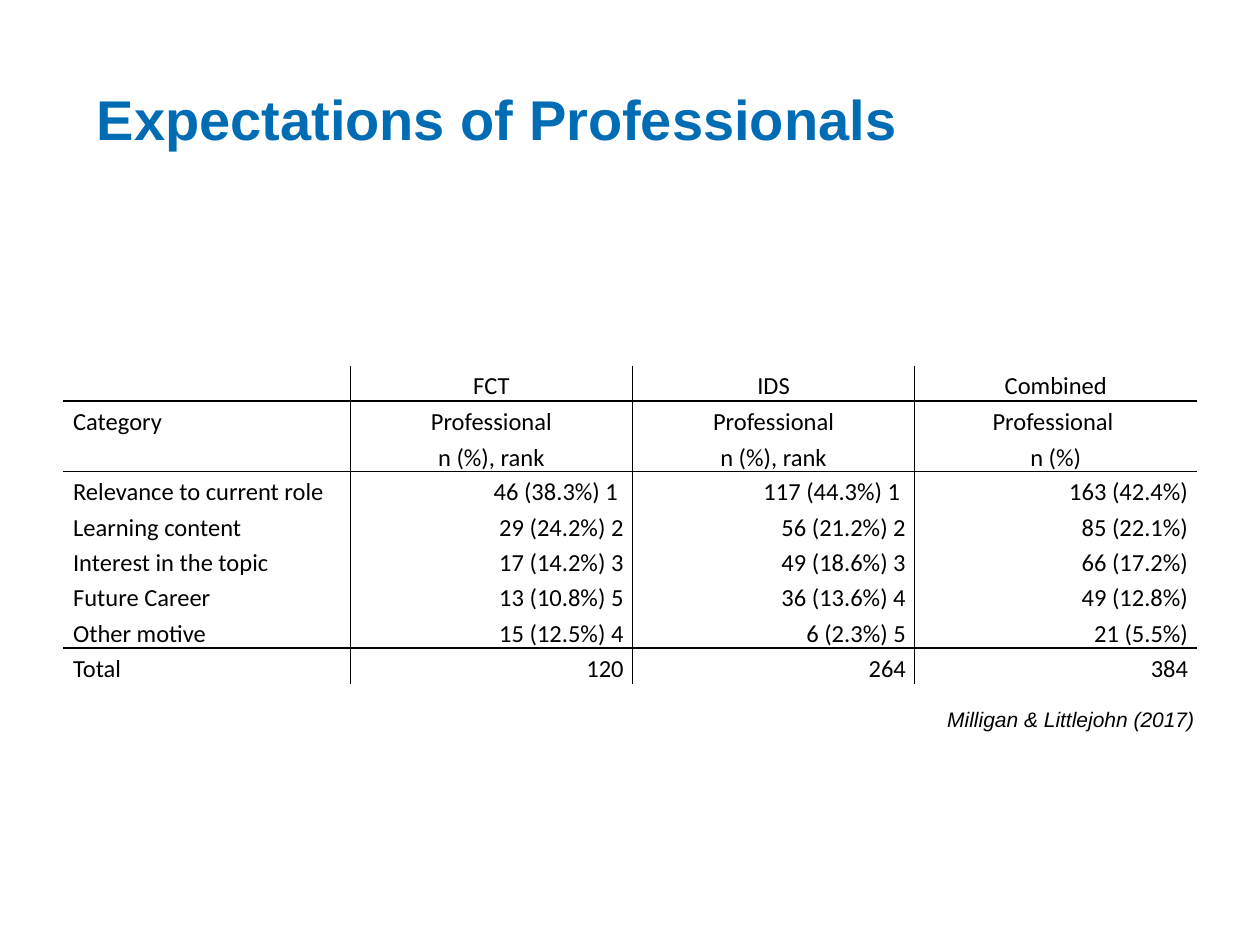
from lxml.etree import SubElement
from pptx import Presentation
from pptx.dml.color import RGBColor
from pptx.enum.text import MSO_ANCHOR, PP_ALIGN
from pptx.oxml.ns import qn
from pptx.util import Inches, Pt

WIDTH, HEIGHT = 10, 7.5
COLORS = {"title": "006CB4", "text": "000000", "rule": "000000"}
NO_STYLE = "{2D5ABB26-0587-4C30-8999-92F81FD0307C}"

COLUMN_WIDTHS = [2.28, 2.24, 2.24, 2.24]
LINE_HEIGHT = 0.28
CELL_SIZE = 14
HEADER_ROWS = 2
RULES_BELOW = {0, 1, 6}  # rows followed by a horizontal rule
ROWS = [
    ["", "FCT", "IDS", "Combined"],
    ["Category", "Professional\nn (%), rank", "Professional\nn (%), rank", "Professional \nn (%)"],
    ["Relevance to current role", "46 (38.3%) 1 ", "117 (44.3%) 1 ", "163 (42.4%)"],
    ["Learning content", "29 (24.2%) 2", "56 (21.2%) 2", "85 (22.1%)"],
    ["Interest in the topic", "17 (14.2%) 3", "49 (18.6%) 3", "66 (17.2%)"],
    ["Future Career", "13 (10.8%) 5", "36 (13.6%) 4", "49 (12.8%)"],
    ["Other motive", "15 (12.5%) 4", "6 (2.3%) 5", "21 (5.5%)"],
    ["Total", "120", "264", "384"],
]


def set_font(paragraph, name, size, color, bold=False, italic=False):
    font = paragraph.font
    font.name, font.size = name, Pt(size)
    font.bold, font.italic = bold, italic
    font.color.rgb = RGBColor.from_string(COLORS[color])


def add_text(slide, text, left, top, width, height, alignment, **font):
    """Add one line of text, placed by shares of the slide's size."""
    shape = slide.shapes.add_textbox(
        Inches(left * WIDTH), Inches(top * HEIGHT),
        Inches(width * WIDTH), Inches(height * HEIGHT))
    frame = shape.text_frame
    frame.word_wrap = True
    frame.vertical_anchor = MSO_ANCHOR.MIDDLE
    paragraph = frame.paragraphs[0]
    paragraph.text = text
    paragraph.alignment = alignment
    set_font(paragraph, "Arial", **font)


def set_borders(cell, sides):
    properties = cell._tc.get_or_add_tcPr()
    for side in "LRTB":
        shown = side in sides
        line = SubElement(properties, qn(f"a:ln{side}"), w=str(Pt(1) if shown else 0))
        fill = SubElement(line, qn("a:solidFill" if shown else "a:noFill"))
        if shown:
            SubElement(fill, qn("a:srgbClr"), val=COLORS["rule"])


def cell_sides(row, column):
    """Vertical rules between columns, horizontal ones around the header and total."""
    rules = {
        "L": column > 0,
        "R": column < len(COLUMN_WIDTHS) - 1,
        "T": row - 1 in RULES_BELOW,
        "B": row in RULES_BELOW,
    }
    return {side for side, shown in rules.items() if shown}


def fill_cell(cell, text, alignment, left_margin):
    cell.margin_left, cell.margin_right = Inches(left_margin), Inches(0.07)
    cell.margin_top = cell.margin_bottom = 0
    cell.text = text
    for paragraph in cell.text_frame.paragraphs:
        paragraph.alignment = alignment
        paragraph.line_spacing = 1.2
        set_font(paragraph, "Calibri", CELL_SIZE, "text")
        if not text:  # keeps the empty cell as low as its row
            SubElement(paragraph._p, qn("a:endParaRPr"), sz=str(CELL_SIZE * 100))


def add_results_table(slide, left, top):
    line_counts = [max(text.count("\n") + 1 for text in row) for row in ROWS]
    frame = slide.shapes.add_table(
        len(ROWS), len(COLUMN_WIDTHS), Inches(left * WIDTH), Inches(top * HEIGHT),
        Inches(sum(COLUMN_WIDTHS)), Inches(sum(line_counts) * LINE_HEIGHT))
    table = frame.table
    table.first_row = table.horz_banding = False
    table._tbl.tblPr.find(qn("a:tableStyleId")).text = NO_STYLE

    for column, width in zip(table.columns, COLUMN_WIDTHS):
        column.width = Inches(width)
    for row, count in zip(table.rows, line_counts):
        row.height = Inches(count * LINE_HEIGHT)

    for row, texts in enumerate(ROWS):
        for column, text in enumerate(texts):
            if column == 0:
                alignment, margin = PP_ALIGN.LEFT, 0.08
            else:
                alignment = PP_ALIGN.CENTER if row < HEADER_ROWS else PP_ALIGN.RIGHT
                margin = 0.07
            cell = table.cell(row, column)
            fill_cell(cell, text, alignment, margin)
            set_borders(cell, cell_sides(row, column))
            cell.fill.background()


def main():
    presentation = Presentation()
    presentation.slide_width, presentation.slide_height = Inches(WIDTH), Inches(HEIGHT)
    slide = presentation.slides.add_slide(presentation.slide_layouts[6])

    # Title
    add_text(slide, "Expectations of Professionals", 0.067, 0.08, 0.866, 0.09,
             PP_ALIGN.LEFT, size=32, color="title", bold=True)
    # Survey results
    add_results_table(slide, 0.05, 0.387)
    # Citation
    add_text(slide, "Milligan & Littlejohn (2017)", 0.685, 0.741, 0.273, 0.04,
             PP_ALIGN.RIGHT, size=12, color="text", italic=True)

    presentation.save("out.pptx")


if __name__ == "__main__":
    main()
